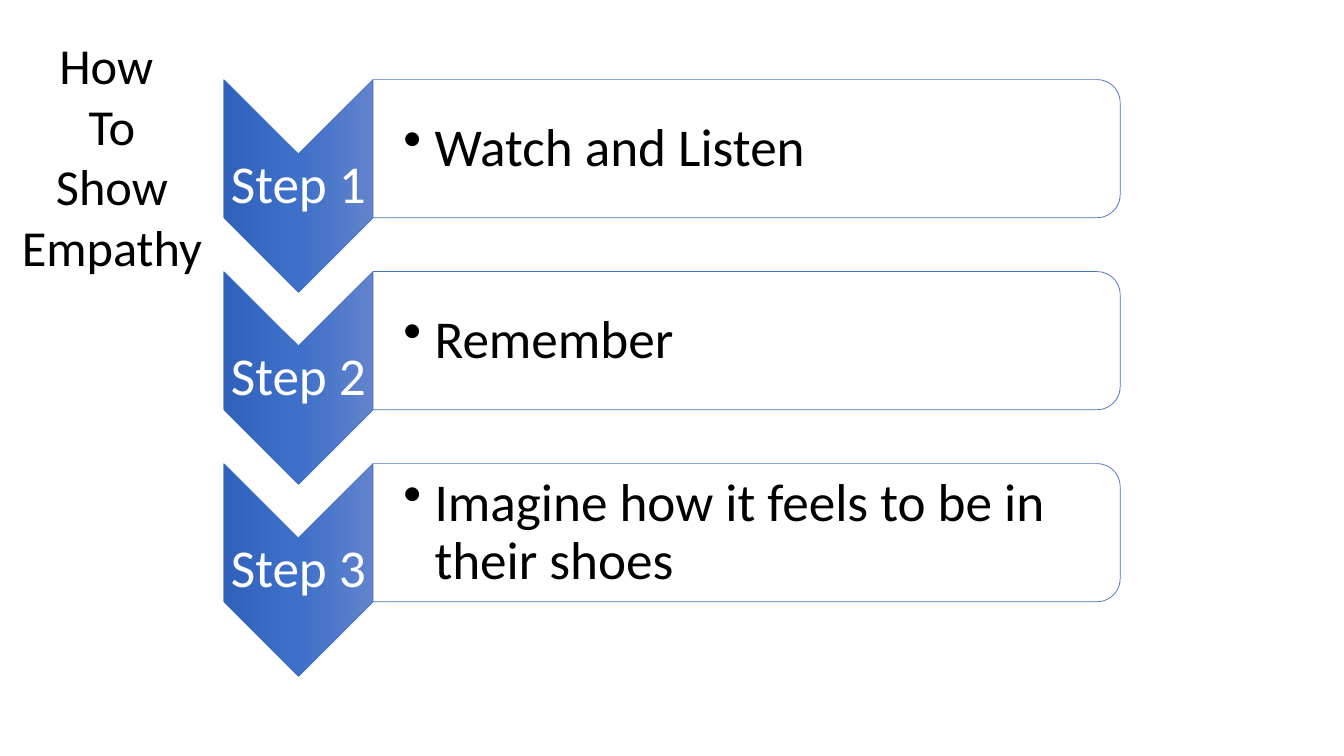
import copy

import pptx
import pptx.dml.color
import pptx.enum.shapes
import pptx.enum.text
import pptx.oxml
import pptx.oxml.ns
import pptx.util

Inches, Pt = pptx.util.Inches, pptx.util.Pt
qn = pptx.oxml.ns.qn
SHAPES = pptx.enum.shapes.MSO_SHAPE
ANCHOR = pptx.enum.text.MSO_ANCHOR
ALIGN = pptx.enum.text.PP_ALIGN

COLORS = {"text": "000000", "label": "FFFFFF", "panel": "FFFFFF", "outline": "4472C4",
          "top": "6183CB", "middle": "3E70CA", "bottom": "3062BB"}
COLORS = {name: pptx.dml.color.RGBColor.from_string(value) for name, value in COLORS.items()}

# Grid: two columns and three evenly spaced rows, in inches
STEPS = ["Watch and Listen", "Remember", "Imagine how it feels to be in their shoes"]
ROW_TOP, ROW_PITCH = 0.79, 1.905
ARROW_LEFT, ARROW_WIDTH, ARROW_HEIGHT = 2.22, 1.48, 2.11
PANEL_LEFT, PANEL_WIDTH, PANEL_HEIGHT = 3.7, 7.41, 1.37


def add_turned_shape(kind, left, top, width, height):
    """Add an outlined shape turned by 90 degrees that covers the given area."""
    shift = (width - height) / 2
    shape = slide.shapes.add_shape(kind, Inches(left + shift), Inches(top - shift),
                                   Inches(height), Inches(width))
    shape.rotation = 90
    shape.shadow.inherit = False
    shape.line.color.rgb = COLORS["outline"]
    shape.line.width = Pt(0.5)
    return shape


def write_text(shape, text, color, size, frame_format, paragraph_format):
    """Write text and apply the format values to its frame and paragraphs."""
    frame = shape.text_frame
    frame.text = text
    for name, value in frame_format.items():
        setattr(frame, name, value)
    for paragraph in frame.paragraphs:
        for name, value in paragraph_format.items():
            setattr(paragraph, name, value)
        for run in paragraph.runs:
            run.font.name, run.font.size = "Calibri", Pt(size)
            run.font.color.rgb = COLORS[color]


presentation = pptx.Presentation()
presentation.slide_width, presentation.slide_height = Inches(13.33), Inches(7.5)
slide = presentation.slides.add_slide(presentation.slide_layouts[5])

# Title, one word to a line
title = slide.shapes.title
title.left, title.top = Inches(0), Inches(0.29)
title.width, title.height = Inches(ARROW_LEFT), Inches(2.52)
write_text(title, "How \nTo\nShow\nEmpathy", "text", 36,
           {"vertical_anchor": ANCHOR.TOP, "word_wrap": True,
            "auto_size": pptx.enum.text.MSO_AUTO_SIZE.NONE},
           {"alignment": ALIGN.CENTER, "line_spacing": 1.0, "space_before": Pt(0)})

# Frame format shared by labels and descriptions
margin = Inches(0.03)
box_format = {"vertical_anchor": ANCHOR.MIDDLE, "word_wrap": True, "margin_left": margin,
              "margin_right": margin, "margin_top": margin, "margin_bottom": margin}

for row, description in enumerate(STEPS):
    top = ROW_TOP + row * ROW_PITCH

    # Arrow with a three-stop gradient
    arrow = add_turned_shape(SHAPES.CHEVRON, ARROW_LEFT, top, ARROW_WIDTH, ARROW_HEIGHT)
    arrow.fill.gradient()
    arrow.fill.gradient_angle = 270
    stop_list = next(arrow.element.spPr.iter(qn("a:gsLst")))
    stop_list.append(copy.deepcopy(stop_list[0]))
    for index, name in enumerate(["top", "middle", "bottom"]):
        stop = arrow.fill.gradient_stops[index]
        stop.position = index / 2
        stop.color.rgb = COLORS[name]

    # Step label
    label = slide.shapes.add_textbox(Inches(ARROW_LEFT), Inches(top + 0.74),
                                     Inches(ARROW_WIDTH), Inches(0.63))
    write_text(label, f"Step {row + 1}", "label", 38, box_format,
               {"alignment": ALIGN.CENTER, "line_spacing": 0.9})

    # Panel with a slightly transparent fill
    panel = add_turned_shape(SHAPES.ROUND_2_SAME_RECTANGLE, PANEL_LEFT, top,
                             PANEL_WIDTH, PANEL_HEIGHT)
    panel.fill.solid()
    panel.fill.fore_color.rgb = COLORS["panel"]
    fill_color = panel.element.spPr.find(qn("a:solidFill"))[0]
    fill_color.append(pptx.oxml.parse_xml(
        f'<a:alpha {pptx.oxml.ns.nsdecls("a")} val="90000"/>'))

    # Bulleted description
    box = slide.shapes.add_textbox(Inches(PANEL_LEFT), Inches(top + 0.07),
                                   Inches(7.34), Inches(1.24))
    write_text(box, description, "text", 38, {**box_format, "margin_left": Inches(0.3)},
               {"level": 1, "alignment": ALIGN.LEFT, "line_spacing": 0.9})
    properties = box.text_frame.paragraphs[0]._p.get_or_add_pPr()
    properties.set("marL", str(Inches(0.31)))
    properties.set("indent", str(-Inches(0.31)))
    properties.append(pptx.oxml.parse_xml(
        f'<a:buChar {pptx.oxml.ns.nsdecls("a")} char="•"/>'))

presentation.save("out.pptx")
